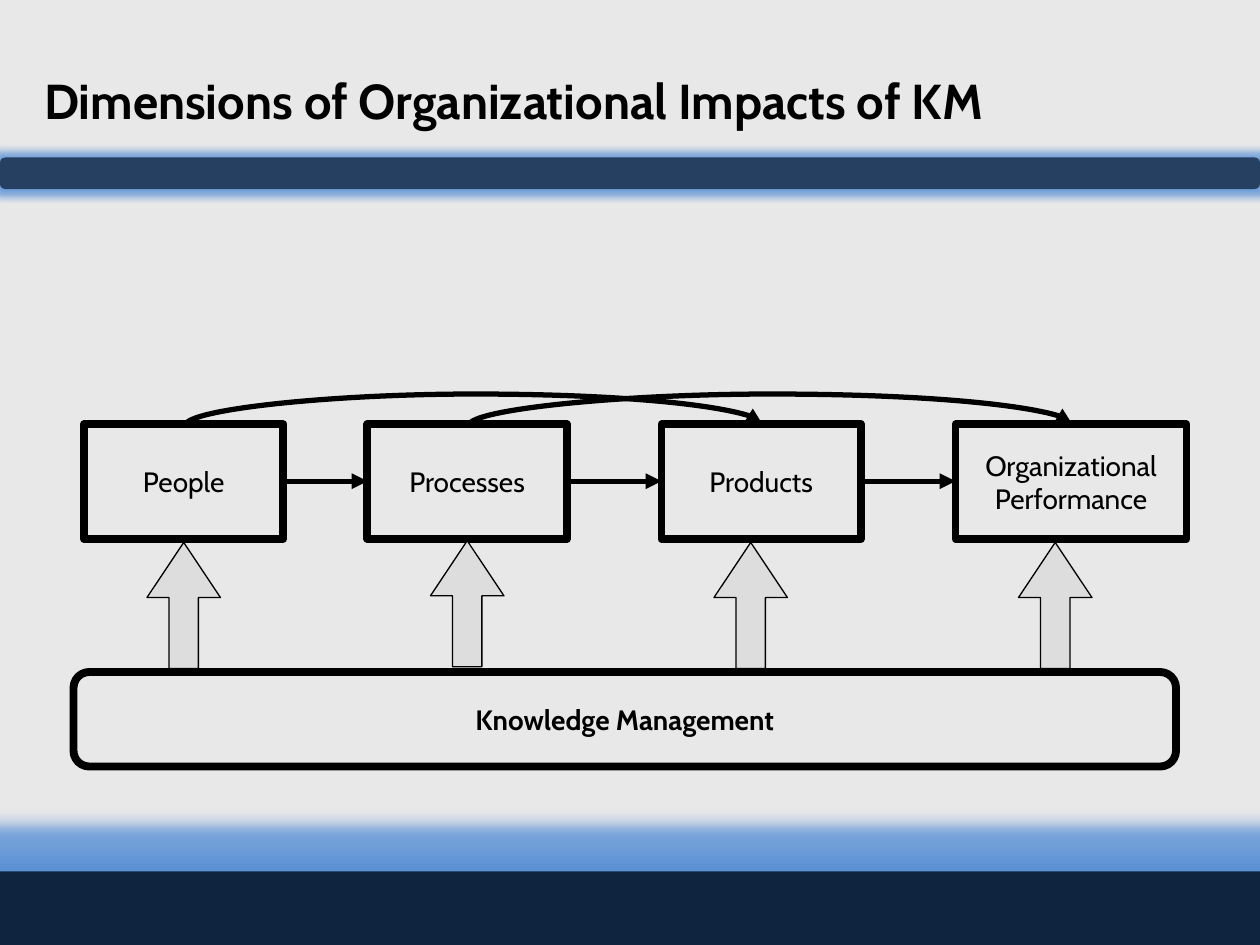
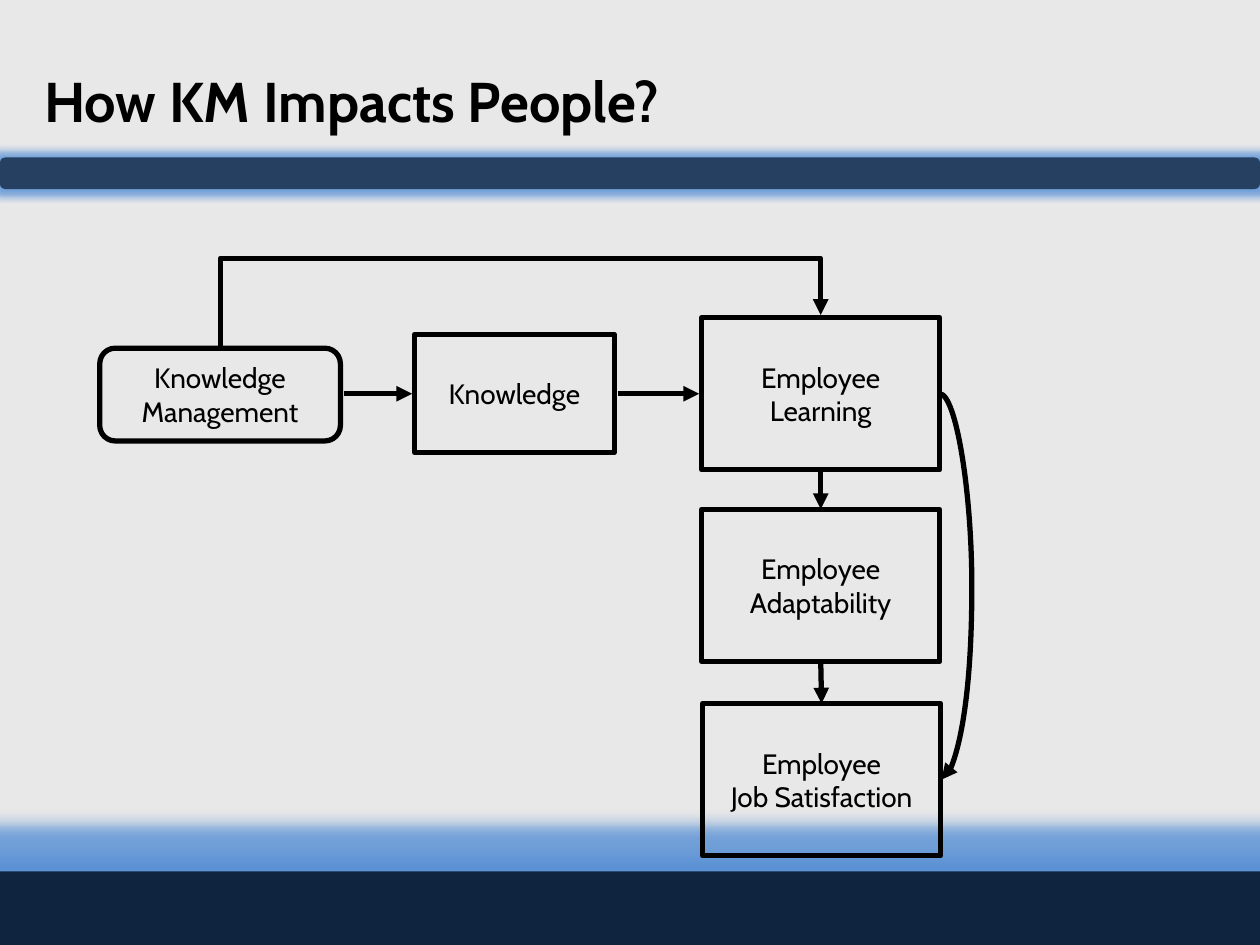
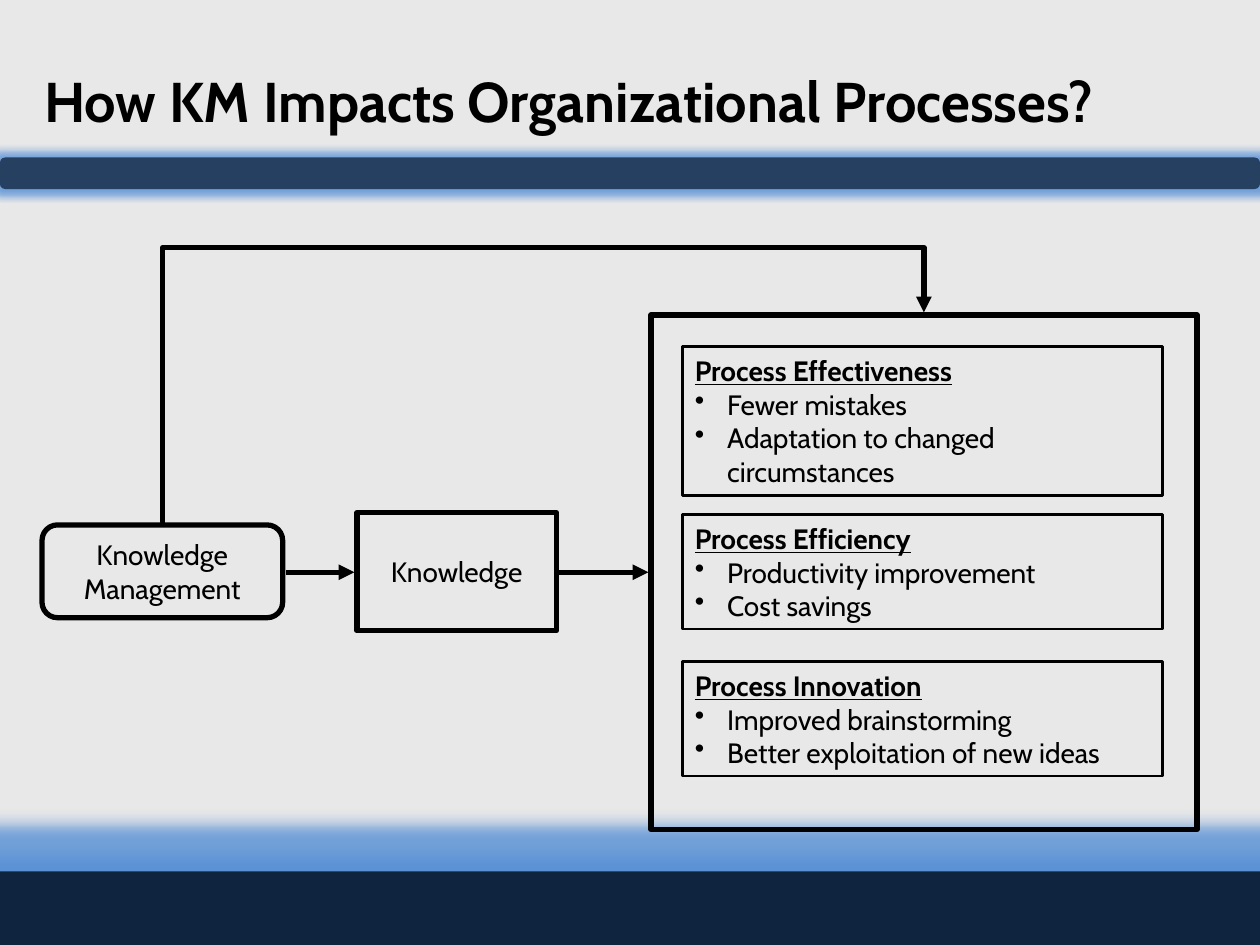
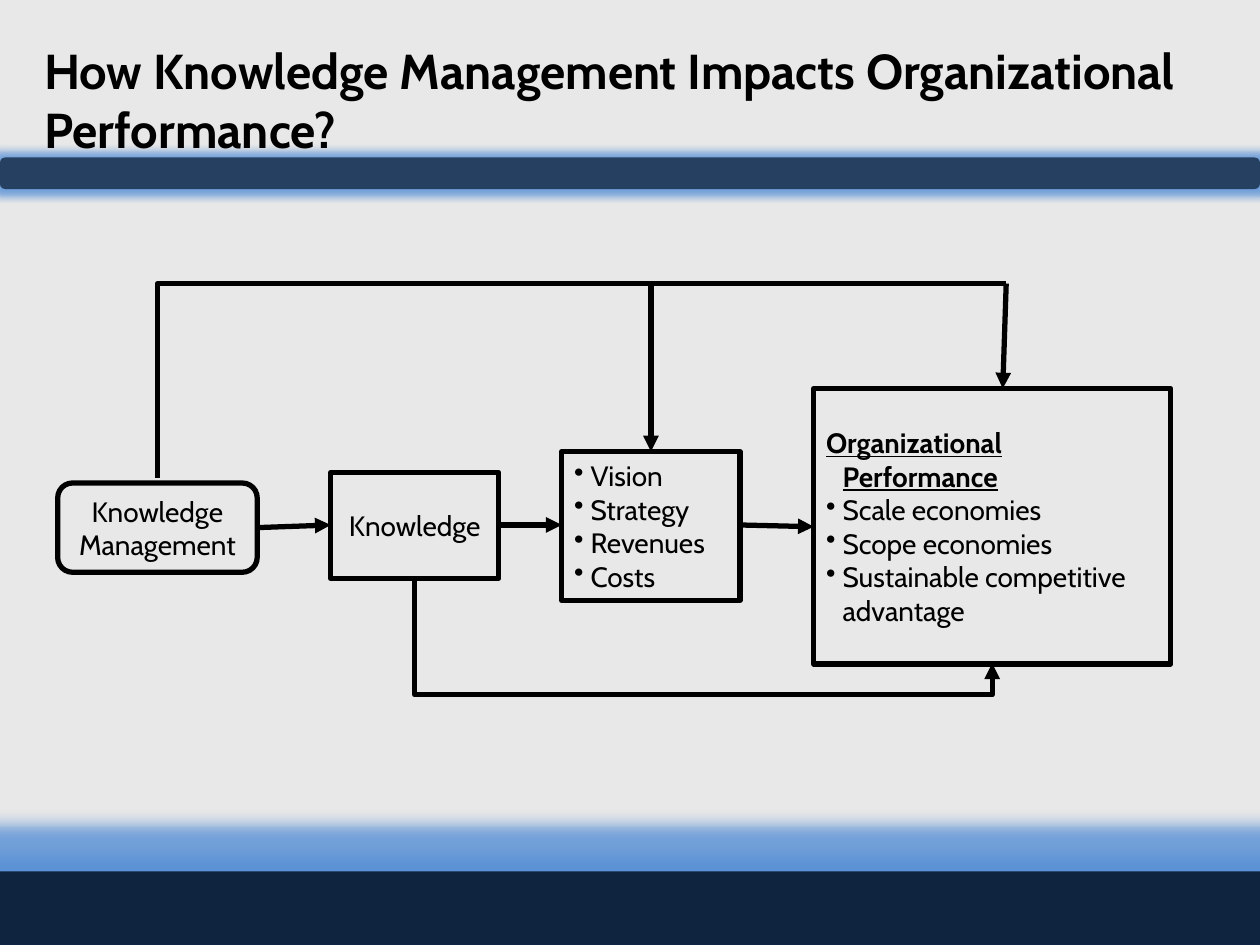
from lxml.etree import SubElement
from pptx import Presentation
from pptx.dml.color import RGBColor
from pptx.enum.shapes import MSO_CONNECTOR as LINK, MSO_SHAPE as SHAPE
from pptx.enum.text import MSO_ANCHOR, MSO_AUTO_SIZE, PP_ALIGN
from pptx.oxml.ns import qn
from pptx.util import Pt

BLACK = RGBColor(0x00, 0x00, 0x00)
BACKGROUND = RGBColor(0xE8, 0xE8, 0xE8)
FOOTER_NAVY = RGBColor(0x0F, 0x24, 0x3E)
BAR_BLUE = RGBColor(0x25, 0x40, 0x61)
GLOW_BLUE = RGBColor(0x55, 0x8E, 0xD5)
ARROW_GRAY = RGBColor(0xDD, 0xDD, 0xDD)
FONT = "Cabin"


def write_text(shape, text, size=16, bold=False, align=PP_ALIGN.CENTER,
               heading=False, bullets=False, indent=0):
    frame = shape.text_frame
    frame.word_wrap = True
    frame.auto_size = MSO_AUTO_SIZE.NONE
    frame.vertical_anchor = MSO_ANCHOR.MIDDLE
    frame.text = text
    for index, paragraph in enumerate(frame.paragraphs):
        is_heading = heading and index == 0
        paragraph.alignment = align
        font = paragraph.font
        for run in paragraph.runs:
            font = run.font
            font.name = FONT
            font.size = Pt(size)
            font.bold = bold or is_heading
            font.underline = is_heading
            font.color.rgb = BLACK
        if indent:
            properties = paragraph._p.get_or_add_pPr()
            properties.set("marL", str(Pt(indent)))
            properties.set("indent", str(-Pt(indent)))
            if bullets and not is_heading:
                SubElement(properties, qn("a:buChar"), char="•")


def add_link(slide, start, end, kind=LINK.STRAIGHT, turn=None, arrow=True):
    (x1, y1), (x2, y2) = start, end
    width, height = abs(x2 - x1), abs(y2 - y1)
    over = turn is not None and width > height
    if over:
        left = (x1 + x2 - height) / 2
        top = (y1 + y2 - width) / 2
        corners = left, top, left + height, top + width
    else:
        corners = x1, y1, x2, y2
    connector = slide.shapes.add_connector(kind, *[Pt(value) for value in corners])
    properties = connector.element.spPr
    if over:
        frame = properties.find(qn("a:xfrm"))
        frame.set("rot", "16200000")
        if y2 > y1:
            frame.set("flipH", "1")
    if turn is not None:
        ratio = (turn - y1) / (y2 - y1) if over else (turn - x1) / (x2 - x1)
        guides = properties.find(qn("a:prstGeom")).find(qn("a:avLst"))
        SubElement(guides, qn("a:gd"), name="adj1", fmla=f"val {round(ratio * 100000)}")
    connector.line.color.rgb = BLACK
    connector.line.width = Pt(3)
    if arrow:
        SubElement(properties.find(qn("a:ln")), qn("a:tailEnd"), type="triangle")
    SubElement(properties, qn("a:effectLst"))


PROCESS_LIST = dict(align=PP_ALIGN.LEFT, heading=True, bullets=True, indent=18.5)
SHORT_LIST = dict(align=PP_ALIGN.LEFT, bullets=True, indent=9.4)
HEADED_LIST = dict(SHORT_LIST, heading=True)
RECT, ROUND = SHAPE.RECTANGLE, SHAPE.ROUNDED_RECTANGLE
KM = "Knowledge Management"

SLIDES = [
    dict(
        title="Dimensions of Organizational Impacts of KM", size=28, width=624,
        boxes=[
            (RECT, 48, 242.5, 114, 65.5, 4.5, "People", {}),
            (RECT, 210, 242.5, 114, 65.5, 4.5, "Processes", {}),
            (RECT, 378, 242.5, 114, 65.5, 4.5, "Products", {}),
            (RECT, 546, 242.5, 132, 65.5, 4.5, "Organizational Performance", {}),
            (ROUND, 42, 384, 630, 54, 4.5, KM, dict(bold=True)),
        ],
        links=[
            dict(start=(162, 275), end=(210, 275)),
            dict(start=(324, 275), end=(378, 275)),
            dict(start=(492, 275), end=(546, 275)),
            dict(start=(106, 243), end=(435.5, 242), kind=LINK.CURVE, turn=225),
            dict(start=(268, 243), end=(612.5, 242), kind=LINK.CURVE, turn=225),
        ],
    ),
    dict(
        title="How KM Impacts People?", size=32, width=624,
        boxes=[
            (ROUND, 57, 199, 137.5, 53, 3, KM, {}),
            (RECT, 237, 191, 114, 67.5, 3, "Knowledge", {}),
            (RECT, 401, 181.5, 136, 87, 3, "Employee Learning", {}),
            (RECT, 401, 291, 136, 87, 3, "Employee Adaptability", {}),
            (RECT, 401.5, 402, 136, 87, 3, "Employee\nJob Satisfaction", {}),
        ],
        links=[
            dict(start=(196.5, 225), end=(235.5, 225)),
            dict(start=(353, 225), end=(399.5, 225)),
            dict(start=(126, 197.5), end=(469, 180), kind=LINK.ELBOW, turn=147.5),
            dict(start=(469, 268.5), end=(469, 291)),
            dict(start=(469, 378), end=(469.5, 402)),
            dict(start=(537, 225), end=(538, 445.5), kind=LINK.CURVE, turn=555.5),
        ],
    ),
    dict(
        title="How KM Impacts Organizational Processes?", size=32, width=624,
        boxes=[
            (ROUND, 24, 300, 137.5, 53, 3, KM, {}),
            (RECT, 204, 293, 114, 67.5, 3, "Knowledge", {}),
            (RECT, 372, 180, 312, 294, 3, "", {}),
            (RECT, 390, 198, 274.5, 85, 1.5,
             "Process Effectiveness\nFewer mistakes\nAdaptation to changed circumstances",
             PROCESS_LIST),
            (RECT, 390, 294, 274.5, 65.5, 1.5,
             "Process Efficiency\nProductivity improvement\nCost savings", PROCESS_LIST),
            (RECT, 390, 378, 274.5, 65.5, 1.5,
             "Process Innovation\nImproved brainstorming\nBetter exploitation of new ideas",
             PROCESS_LIST),
        ],
        links=[
            dict(start=(163.5, 327), end=(202.5, 327)),
            dict(start=(319.5, 327), end=(370.5, 327)),
            dict(start=(93, 299), end=(528, 178.5), kind=LINK.ELBOW, turn=141.5),
        ],
    ),
    dict(
        title="How Knowledge Management Impacts Organizational Performance?",
        size=28, width=666,
        boxes=[
            (ROUND, 33, 276, 114, 51, 3, KM, {}),
            (RECT, 189, 270, 96, 60.5, 3, "Knowledge", {}),
            (RECT, 321, 258, 102, 85, 3, "Vision\nStrategy\nRevenues\nCosts", SHORT_LIST),
            (RECT, 465, 222, 204, 157.5, 3,
             "Organizational Performance\nScale economies\nScope economies\n"
             "Sustainable competitive advantage", HEADED_LIST),
        ],
        links=[
            dict(start=(147, 301.5), end=(189, 300)),
            dict(start=(285, 300), end=(321, 300)),
            dict(start=(423, 300), end=(465, 301)),
            dict(start=(90, 273), end=(372, 258), kind=LINK.ELBOW, turn=162),
            dict(start=(371, 162), end=(575, 162), arrow=False),
            dict(start=(575, 162), end=(573, 222)),
            dict(start=(237, 330), end=(567, 379), kind=LINK.ELBOW, turn=397),
        ],
    ),
]

presentation = Presentation()
presentation.slide_width = Pt(720)
presentation.slide_height = Pt(540)
background = presentation.slide_master.background.fill
background.solid()
background.fore_color.rgb = BACKGROUND
layout = presentation.slide_layouts[5]

for page in SLIDES:
    slide = presentation.slides.add_slide(layout)
    title = slide.shapes.title
    title.left, title.top = Pt(18), Pt(30)
    title.width, title.height = Pt(page["width"]), Pt(54)
    write_text(title, page["title"], size=page["size"], bold=True, align=PP_ALIGN.LEFT)

    for kind, left, top, width, height, weight, text, text_format in page["boxes"]:
        box = slide.shapes.add_shape(kind, Pt(left), Pt(top), Pt(width), Pt(height))
        box.shadow.inherit = False
        box.fill.background()
        box.line.color.rgb = BLACK
        box.line.width = Pt(weight)
        if text:
            write_text(box, text, **text_format)

    for link in page["links"]:
        add_link(slide, **link)

first_slide = presentation.slides[0]
for left, top in [(84, 310), (246, 309), (408, 310), (582, 310)]:
    up_arrow = first_slide.shapes.add_shape(SHAPE.UP_ARROW, Pt(left), Pt(top), Pt(42), Pt(72))
    up_arrow.adjustments[0] = 0.4
    up_arrow.adjustments[1] = 0.75
    up_arrow.shadow.inherit = False
    up_arrow.fill.solid()
    up_arrow.fill.fore_color.rgb = ARROW_GRAY
    up_arrow.line.color.rgb = BLACK
    up_arrow.line.width = Pt(0.75)

for kind, top, height, color, glow_radius in [
    (ROUND, 90, 18, BAR_BLUE, 8),
    (RECT, 498, 42, FOOTER_NAVY, 18),
]:
    band = first_slide.shapes.add_shape(kind, Pt(0), Pt(top), Pt(720), Pt(height))
    band.shadow.inherit = False
    band.fill.solid()
    band.fill.fore_color.rgb = color
    band.line.fill.background()
    effects = band.element.spPr.find(qn("a:effectLst"))
    glow = SubElement(effects, qn("a:glow"), rad=str(Pt(glow_radius)))
    glow_color = SubElement(glow, qn("a:srgbClr"), val=str(GLOW_BLUE))
    SubElement(glow_color, qn("a:alpha"), val="80000")
    layout.shapes.element.insert(2, band.element)

presentation.save("out.pptx")
